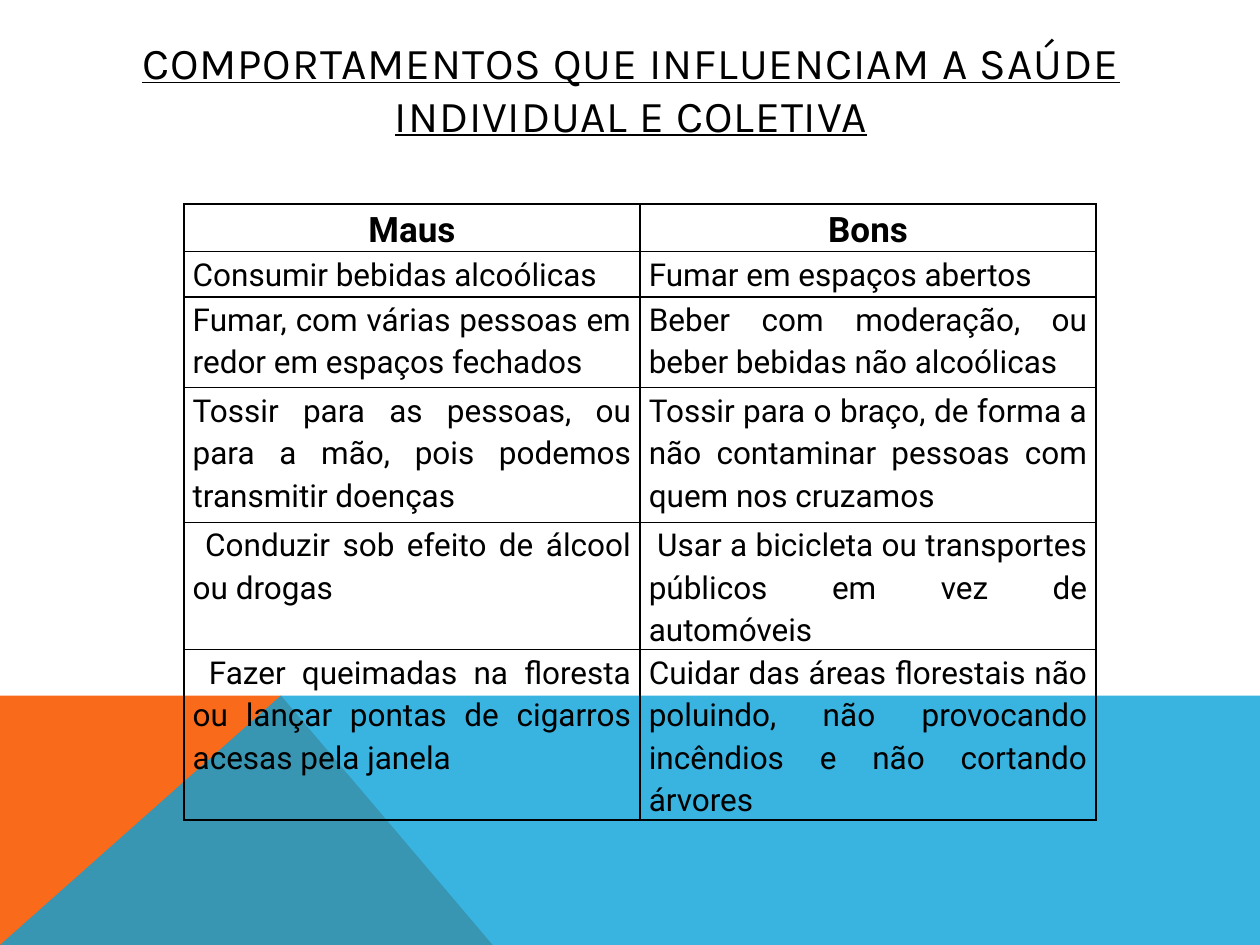
from lxml.etree import SubElement
from pptx import Presentation
from pptx.dml.color import RGBColor
from pptx.enum.text import MSO_ANCHOR, PP_ALIGN
from pptx.oxml.ns import qn
from pptx.util import Inches, Pt

COLORS = {"text": "000000", "border": "000000", "orange": "F96A1B", "blue": "08A1D9"}
TITLE = "COMPORTAMENTOS QUE INFLUENCIAM A SAÚDE INDIVIDUAL E COLETIVA"
HEADERS = ("Maus", "Bons")
BEHAVIOURS = [
    ("Consumir bebidas alcoólicas", "Fumar em espaços abertos"),
    ("Fumar, com várias pessoas em redor em espaços fechados",
     "Beber com moderação, ou beber bebidas não alcoólicas"),
    ("Tossir para as pessoas, ou para a mão, pois podemos transmitir doenças",
     "Tossir para o braço, de forma a não contaminar pessoas com quem nos cruzamos"),
    (" Conduzir sob efeito de álcool ou drogas",
     " Usar a bicicleta ou transportes públicos em vez de automóveis"),
    (" Fazer queimadas na floresta ou lançar pontas de cigarros acesas pela janela",
     "Cuidar das áreas florestais não poluindo, não provocando incêndios e não cortando árvores"),
]
ROW_HEIGHTS = (0.37, 0.36, 0.72, 1.07, 1.01, 1.35)


def write(tf, text, font="Roboto", size=18, bold=False, underline=False,
          align=PP_ALIGN.JUSTIFY, line_spacing=1.15, tracking=0):
    p = tf.paragraphs[0]
    p.alignment, p.line_spacing = align, line_spacing
    r = p.add_run()
    r.text = text
    f = r.font
    f.name, f.size, f.bold, f.underline = font, Pt(size), bold, underline
    f.color.rgb = RGBColor.from_string(COLORS["text"])
    if tracking:
        r._r.get_or_add_rPr().set("spc", str(tracking))


def add_polygon(s, points, color, alpha=None):
    corners = [(Inches(x), Inches(y)) for x, y in points]
    builder = s.shapes.build_freeform(*corners[0], scale=1.0)
    builder.add_line_segments(corners[1:], close=True)
    sp = builder.convert_to_shape()
    sp.shadow.inherit = False
    sp.fill.solid()
    sp.fill.fore_color.rgb = RGBColor.from_string(color)
    sp.line.fill.background()
    if alpha:
        clr = sp._element.spPr.find(qn("a:solidFill"))[0]
        SubElement(clr, qn("a:alpha"), val=str(alpha * 1000))


def add_footer_band(s, x, y, w, h):
    peak = x + 2.23
    bottom = y + h
    add_polygon(s, [(x, bottom), (x, y), (peak, y), (x + 3.91, bottom)], COLORS["orange"])
    add_polygon(s, [(x, bottom), (peak, y), (x + w, y), (x + w, bottom)],
                COLORS["blue"], alpha=80)


def add_title(s, x, y, w, h):
    sp = s.shapes.title
    sp.left, sp.top, sp.width, sp.height = (Inches(v) for v in (x, y, w, h))
    tf = sp.text_frame
    tf.word_wrap, tf.vertical_anchor = True, MSO_ANCHOR.MIDDLE
    write(tf, TITLE, font="Karla", size=25.2, underline=True,
          align=PP_ALIGN.CENTER, line_spacing=1.0, tracking=50)


def add_borders(cell):
    tcPr = cell._tc.get_or_add_tcPr()
    for i, side in enumerate(("lnL", "lnR", "lnT", "lnB")):
        ln = tcPr.makeelement(qn(f"a:{side}"), {"w": str(Pt(1))})
        fill = SubElement(ln, qn("a:solidFill"))
        SubElement(fill, qn("a:srgbClr"), val=COLORS["border"])
        tcPr.insert(i, ln)


def add_behaviour_table(s, x, y, w, h):
    rows = [HEADERS] + BEHAVIOURS
    table = s.shapes.add_table(len(rows), len(HEADERS), Inches(x), Inches(y),
                               Inches(w), Inches(h)).table
    table.horz_banding = False
    for row, height in zip(table.rows, ROW_HEIGHTS):
        row.height = Inches(height)
    for i, texts in enumerate(rows):
        style = dict(size=20, bold=True, align=PP_ALIGN.CENTER) if i == 0 else {}
        for j, text in enumerate(texts):
            cell = table.cell(i, j)
            cell.margin_left = cell.margin_right = Inches(0.07)
            cell.margin_top = cell.margin_bottom = 0
            cell.fill.background()
            add_borders(cell)
            write(cell.text_frame, text, **style)


def main():
    prs = Presentation()
    prs.slide_width, prs.slide_height = Inches(10), Inches(7.5)
    s = prs.slides.add_slide(prs.slide_layouts[5])
    # Coloured band along the bottom
    add_footer_band(s, 0, 5.52, 10, 1.98)
    # Heading
    add_title(s, 0.9, 0.4, 8.22, 0.6)
    # Bad and good behaviours
    add_behaviour_table(s, 1.46, 1.62, 7.24, sum(ROW_HEIGHTS))
    # Keep the title above the band
    s.shapes._spTree.append(s.shapes.title._element)
    prs.save("out.pptx")


if __name__ == "__main__":
    main()
